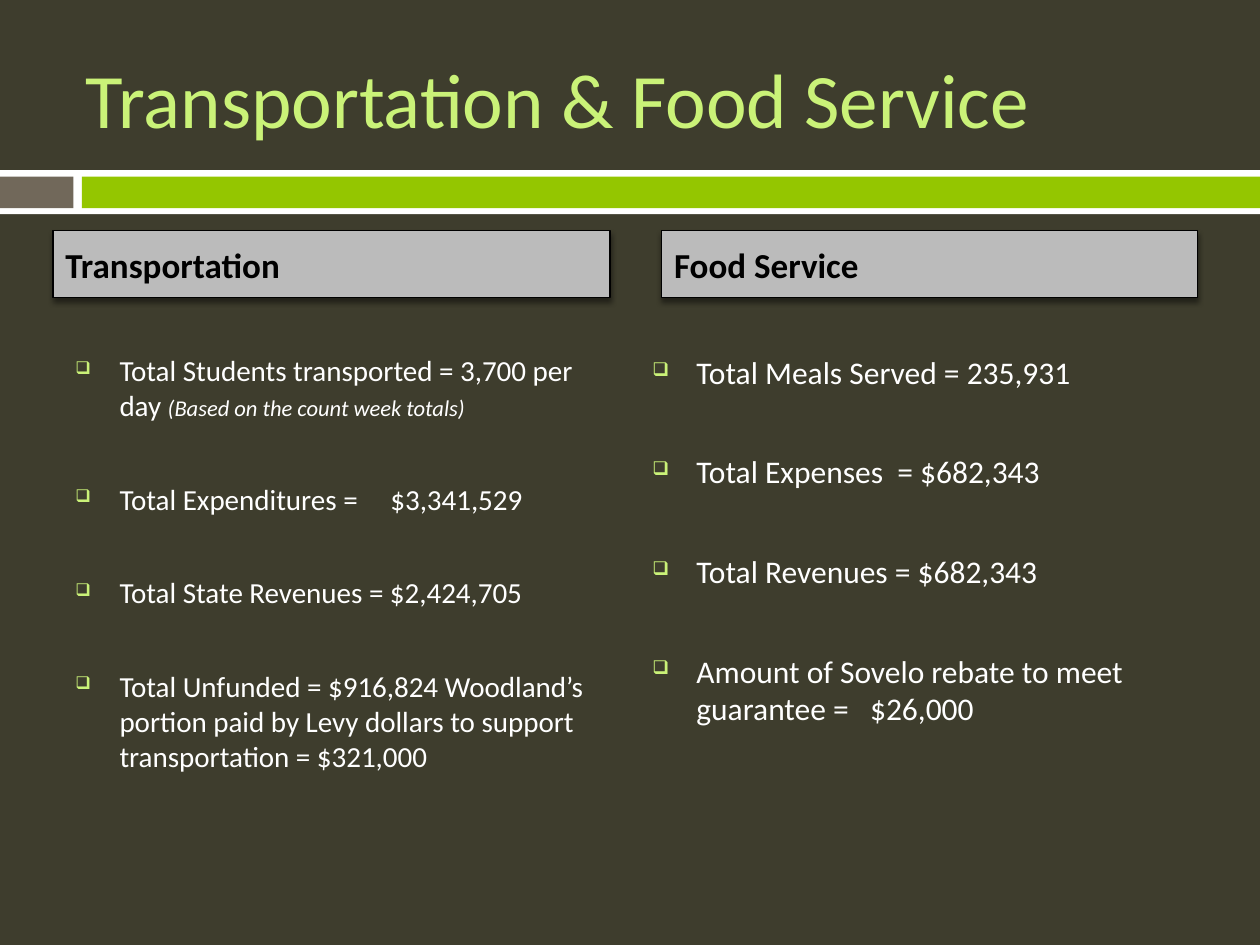
"""Build the Transportation & Food Service slide."""
from lxml.etree import SubElement as Sub
from pptx import Presentation as Deck
from pptx.dml.color import RGBColor as Rgb
from pptx.enum.shapes import MSO_SHAPE as Kind
from pptx.enum.text import MSO_ANCHOR as Anchor
from pptx.oxml.ns import qn
from pptx.util import Cm, Pt

LIME, WHITE, BLACK = "CAF278", "FFFFFF", "000000"
TITLE = "Transportation & Food Service"
BANDS = [
    (0, 3.43, 25.4, 0.89, WHITE),
    (0, 3.56, 1.48, 0.64, "71685A"),
    (1.65, 3.56, 23.75, 0.64, "94C600"),
]
COLS = [
    dict(head="Transportation", box=(1.07, 11.23), body=(1.27, 8.13), size=16.6, skip=33.5, items=[
        [("Total Students transported = 3,700 per day ", {}),
         ("(Based on the count week totals)", dict(size=12.9, slant=True))],
        [("Total Expenditures =", {}), (" ", dict(gap=15)), ("$3,341,529", {})],
        [("Total State Revenues = $2,424,705", {})],
        [("Total Unfunded = $916,824 Woodland’s portion paid by Levy dollars "
          "to support transportation = $321,000", {})],
    ]),
    dict(head="Food Service", box=(13.34, 10.8), body=(12.9, 8.26), size=18, skip=35.3, items=[
        [("Total Meals Served = 235,931", {})],
        [("Total Expenses", {}), (" ", dict(gap=4)), ("= $682,343", {})],
        [("Total Revenues = $682,343", {})],
        [("Amount of Sovelo rebate to meet guarantee =", {}), (" ", dict(gap=8)), ("$26,000", {})],
    ]),
]


def paint(fill, code):
    fill.solid()
    fill.fore_color.rgb = Rgb.from_string(code)


def write(para, text, size=18, color=WHITE, bold=False, slant=False, gap=0):
    run = para.add_run()
    run.text = text
    font = run.font
    font.name, font.size, font.bold, font.italic = "Calibri", Pt(size), bold, slant
    font.color.rgb = Rgb.from_string(color)
    if gap:
        font._element.set("spc", str(gap * 100))


def block(slide, left, top, wide, high, fill):
    shape = slide.shapes.add_shape(Kind.RECTANGLE, Cm(left), Cm(top), Cm(wide), Cm(high))
    shape.shadow.inherit = False
    paint(shape.fill, fill)
    shape.line.fill.background()
    return shape


def area(slide, left, top, wide, high):
    frame = slide.shapes.add_textbox(Cm(left), Cm(top), Cm(wide), Cm(high)).text_frame
    frame.word_wrap = True
    return frame


def shade(shape):
    glow = Sub(shape._element.spPr.find(qn("a:effectLst")), qn("a:outerShdw"),
               blurRad=str(Pt(3)), dist=str(Pt(2.4)), dir="5400000", rotWithShape="0")
    tint = Sub(glow, qn("a:srgbClr"), val=BLACK)
    Sub(tint, qn("a:alpha"), val="45000")


def bullet(para):
    props = para._p.get_or_add_pPr()
    props.set("marL", str(Cm(0.89)))
    props.set("indent", str(-Cm(0.89)))
    Sub(Sub(props, qn("a:buClr")), qn("a:srgbClr"), val=LIME)
    Sub(props, qn("a:buSzPct"), val="60000")
    Sub(props, qn("a:buChar"), char="❑")


def header(slide, col):
    left, wide = col["box"]
    shape = block(slide, left, 4.65, wide, 1.35, "BBBBBB")
    paint(shape.line.fill, BLACK)
    shape.line.width = Pt(0.79)
    shade(shape)
    frame = shape.text_frame
    frame.vertical_anchor = Anchor.MIDDLE
    para = frame.paragraphs[0]
    para.alignment = 1
    write(para, col["head"], size=20, color=BLACK, bold=True)


def column(slide, col):
    left, high = col["body"]
    frame = area(slide, left, 6.99, 11.23, high)
    for row, item in enumerate(col["items"]):
        para = frame.add_paragraph() if row else frame.paragraphs[0]
        if row:
            para.space_before = Pt(col["skip"])
        bullet(para)
        for text, look in item:
            write(para, text, **{"size": col["size"], **look})


def main():
    deck = Deck()
    deck.slide_width, deck.slide_height = Cm(25.4), Cm(19.05)
    slide = deck.slides.add_slide(deck.slide_layouts[6])
    paint(slide.background.fill, "3E3D2D")
    for band in BANDS:
        block(slide, *band)
    frame = area(slide, 1.48, 0.76, 22.65, 2.41)
    frame.vertical_anchor = Anchor.MIDDLE
    write(frame.paragraphs[0], TITLE, size=44, color=LIME)
    for col in COLS:
        column(slide, col)
        header(slide, col)
    deck.save("out.pptx")


if __name__ == "__main__":
    main()
